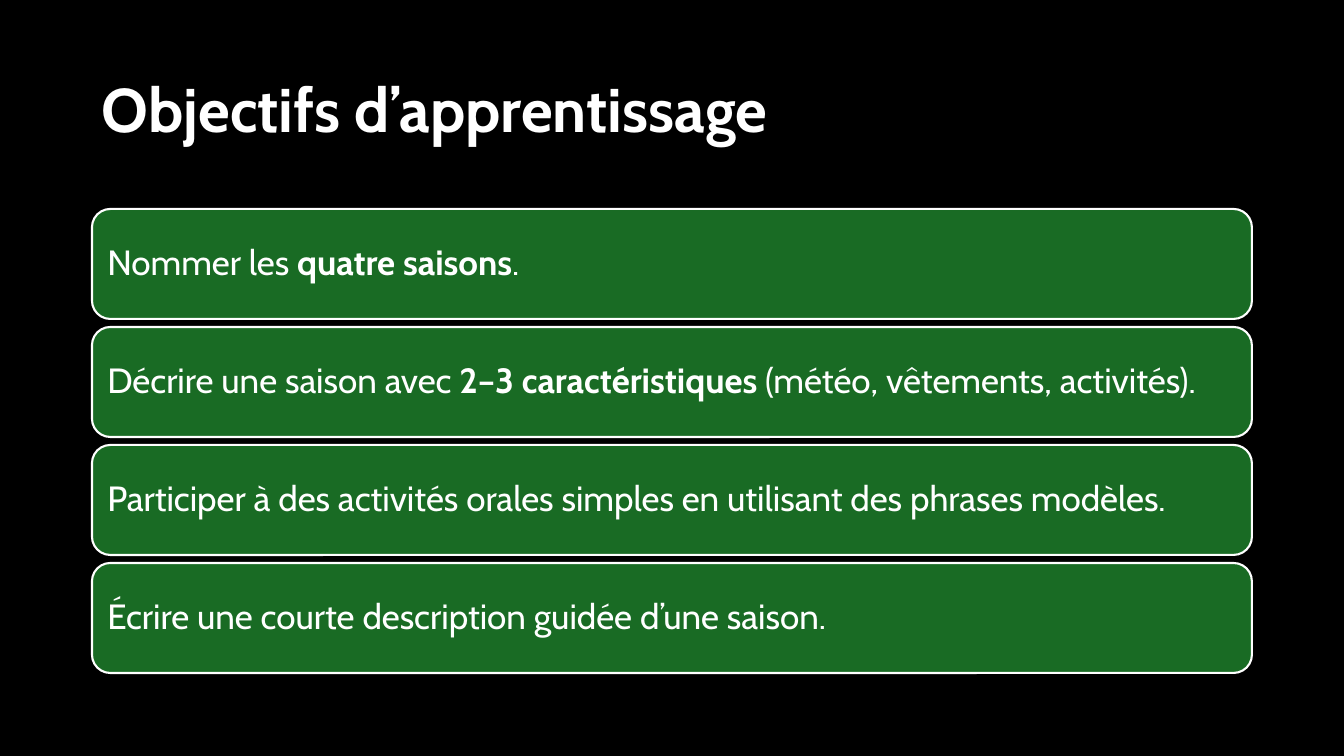
import pptx
import pptx.dml.color
import pptx.enum.shapes
import pptx.enum.text
import pptx.util

BLACK = pptx.dml.color.RGBColor(0x00, 0x00, 0x00)
WHITE = pptx.dml.color.RGBColor(0xFF, 0xFF, 0xFF)
GREEN = pptx.dml.color.RGBColor(0x19, 0x6B, 0x24)

PAGE_WIDTH, PAGE_HEIGHT = 1344, 756
MARGIN = 92
CONTENT_WIDTH = PAGE_WIDTH - 2 * MARGIN
CARD_TOP, CARD_HEIGHT, CARD_GAP = 209, 110, 8

# Each objective is a list of (text, bold) runs
OBJECTIVES = [
    [("Nommer les ", False), ("quatre saisons", True), (".", False)],
    [("Décrire une saison avec ", False), ("2–3 caractéristiques", True),
     (" (météo, vêtements, activités).", False)],
    [("Participer à des activités orales simples en utilisant des phrases modèles.", False)],
    [("Écrire une courte description guidée d’une saison.", False)],
]


def px(length):
    return pptx.util.Emu(round(length * 12192000 / PAGE_WIDTH))


class SlideBuilder:
    font_name = "Cabin"

    def __init__(self, deck):
        self.page = deck.slides.add_slide(deck.slide_layouts[5])
        background = self.page.background.fill
        background.solid()
        background.fore_color.rgb = BLACK

    def add_text(self, box, runs, size, inset):
        frame = box.text_frame
        frame.word_wrap = True
        frame.auto_size = pptx.enum.text.MSO_AUTO_SIZE.NONE
        frame.vertical_anchor = pptx.enum.text.MSO_ANCHOR.MIDDLE
        frame.margin_left = frame.margin_right = px(inset)
        frame.margin_top = frame.margin_bottom = px(5)
        para = frame.paragraphs[0]
        para.alignment = pptx.enum.text.PP_ALIGN.LEFT
        para.line_spacing = 0.9
        for text, bold in runs:
            span = para.add_run()
            span.text = text
            span.font.name = self.font_name
            span.font.size = pptx.util.Pt(size)
            span.font.bold = bold
            span.font.color.rgb = WHITE

    def title(self, text, left, top, width, height):
        box = self.page.shapes.title
        box.left, box.top, box.width, box.height = map(px, (left, top, width, height))
        self.add_text(box, [(text, True)], 44, 10)

    def card(self, runs, left, top, width, height):
        box = self.page.shapes.add_shape(
            pptx.enum.shapes.MSO_SHAPE.ROUNDED_RECTANGLE,
            *map(px, (left, top, width, height)))
        box.shadow.inherit = False
        box.fill.solid()
        box.fill.fore_color.rgb = GREEN
        box.line.color.rgb = WHITE
        box.line.width = pptx.util.Pt(1.5)
        self.add_text(box, runs, 25, 10)


def main():
    deck = pptx.Presentation()
    deck.slide_width, deck.slide_height = px(PAGE_WIDTH), px(PAGE_HEIGHT)
    builder = SlideBuilder(deck)

    # Heading
    builder.title("Objectifs d’apprentissage", MARGIN, 40, CONTENT_WIDTH, 146)

    # Stack of objective cards
    for index, runs in enumerate(OBJECTIVES):
        top = CARD_TOP + index * (CARD_HEIGHT + CARD_GAP)
        builder.card(runs, MARGIN, top, CONTENT_WIDTH, CARD_HEIGHT)

    deck.save("out.pptx")


if __name__ == "__main__":
    main()
